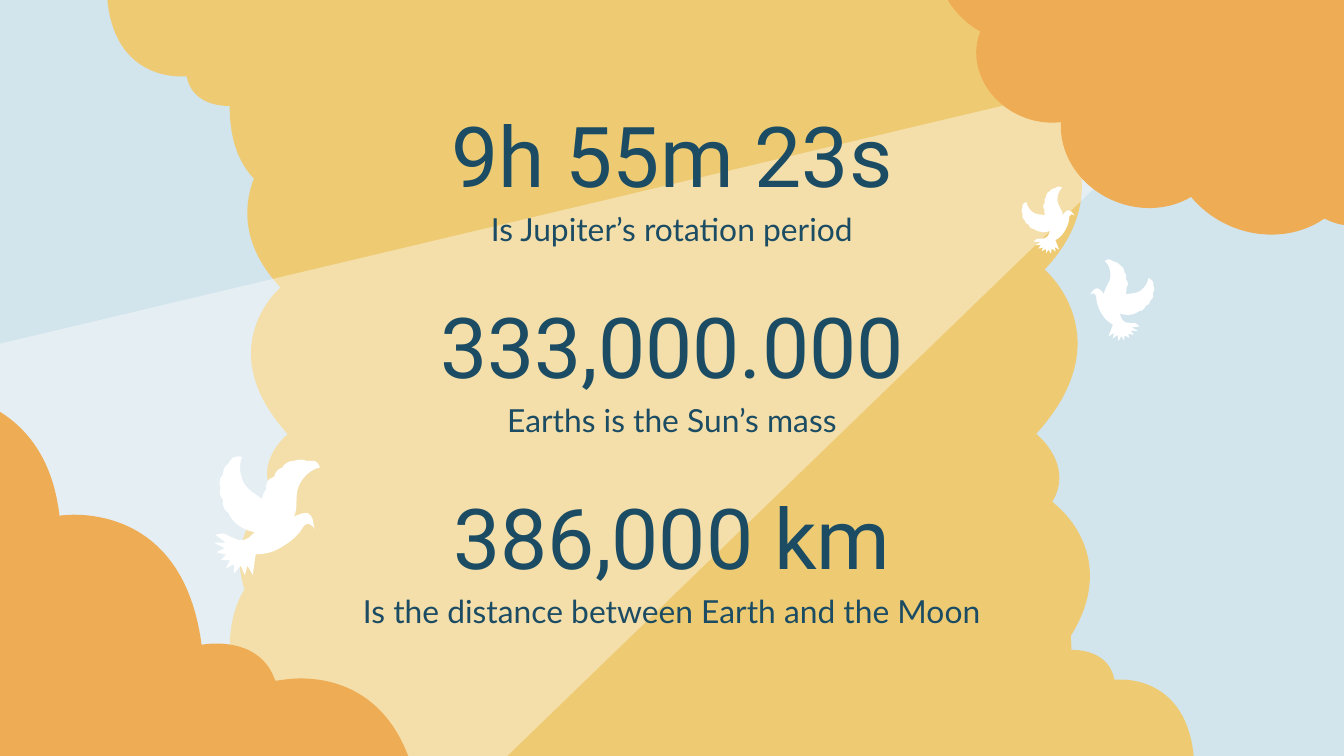
from collections import namedtuple
from math import cos, radians, sin

from lxml import etree
from pptx import Presentation
from pptx.dml.color import RGBColor
from pptx.enum.shapes import MSO_SHAPE
from pptx.enum.text import MSO_ANCHOR, PP_ALIGN
from pptx.oxml.ns import qn
from pptx.util import Cm, Pt

RECTANGLE = MSO_SHAPE.RECTANGLE
TRIANGLE = MSO_SHAPE.ISOSCELES_TRIANGLE
CLOUD = MSO_SHAPE.CLOUD
MIDDLE = MSO_ANCHOR.MIDDLE
CENTER = PP_ALIGN.CENTER

SKY, SAND, ORANGE, WHITE, NAVY = "D2E4EC", "EECB73", "EEAD55", "FFFFFF", "1B4C63"
WIDTH, HEIGHT = 25.4, 14.29

# Boxes are in centimetres.
Box = namedtuple("Box", "left top width height")

# Outlines start at a point; pairs are lines, sixes are cubic curves.
BANK_GRID = (198, 217)
BANK = [
    (0, 0), (0, 217), (198, 217), (193, 165, 156, 160, 144, 160), (139, 160),
    (135, 139, 113, 138, 109, 138), (107, 138), (107, 69, 55, 67, 50, 67),
    (49, 67), (50, 7, 0, 0, 0, 0),
]
DOVE_GRID = (100, 100)
NEAR_WING = [
    (80, 13), (75, 13), (70, 11, 66, 13, 66, 13), (59, 13, 57, 18, 57, 18),
    (51, 20, 51, 25, 51, 25), (51, 25, 44, 26, 45, 34), (45, 34, 39, 41, 42, 53),
    (45, 65, 53, 70, 58, 71), (62, 72), (62, 72, 60, 66, 65, 56),
    (70, 46, 65, 40, 70, 30), (76, 19, 85, 18, 85, 18), (84, 15, 82, 13, 80, 13),
]
BODY = [
    (76, 52), (69, 51, 66, 56, 58, 57), (49, 58, 38, 62, 28, 75), (25, 81),
    (25, 81, 42, 86, 55, 78), (68, 71, 72, 63, 72, 63), (72, 63, 74, 59, 77, 60),
    (81, 62, 81, 64, 81, 64), (80, 59), (80, 59, 80, 54, 76, 52),
]
TAIL = [
    (38, 68), (28, 72), (24, 72), (13, 67), (7, 68), (15, 74), (6, 74), (14, 78),
    (8, 81), (15, 83), (11, 87), (18, 87), (15, 93), (21, 90), (21, 97), (26, 91),
    (29, 98), (31, 91), (35, 98), (37, 83), (44, 77),
]
FAR_WING = [
    (27, 10), (19, 8, 17, 15, 17, 15), (12, 18, 13, 23, 13, 23),
    (8, 28, 11, 33, 11, 33), (9, 39, 13, 42, 13, 42), (13, 42, 11, 48, 17, 52),
    (17, 52, 20, 61, 32, 65), (50, 71, 59, 59, 59, 59), (57, 59, 51, 57, 47, 48),
    (42, 38, 34, 39, 28, 29), (23, 18, 27, 10, 27, 10),
]

FACTS = [
    ("9h 55m 23s", "Is Jupiter’s rotation period"),
    ("333,000.000", "Earths is the Sun’s mass"),
    ("386,000 km", "Is the distance between Earth and the Moon"),
]


def color(hex_string):
    return RGBColor.from_string(hex_string)


def paint(shape, fill):
    shape.shadow.inherit = False
    shape.fill.solid()
    shape.fill.fore_color.rgb = color(fill)
    shape.line.fill.background()


def bend_lines(shape, segments):
    """Turn each line whose segment has control points into a cubic curve."""
    lines = list(shape.element.iter(qn("a:lnTo")))
    for line, segment in zip(lines, segments):
        if len(segment) == 1:
            continue
        curve = etree.Element(qn("a:cubicBezTo"))
        for x, y in segment:
            etree.SubElement(curve, qn("a:pt"), x=str(x - shape.left), y=str(y - shape.top))
        line.getparent().replace(line, curve)


def add_outline(shapes, box, grid, outline, fill, angle=0, flip_h=False, flip_v=False):
    """Fit the grid to the box, mirror it, then turn it clockwise about its centre."""
    cosine, sine = cos(radians(angle)), sin(radians(angle))

    def place(x, y):
        across = (x / grid[0] - 0.5) * box.width * (-1 if flip_h else 1)
        down = (y / grid[1] - 0.5) * box.height * (-1 if flip_v else 1)
        return (Cm(box.left + box.width / 2 + across * cosine - down * sine),
                Cm(box.top + box.height / 2 + across * sine + down * cosine))

    start, *segments = [
        [place(*numbers[i:i + 2]) for i in range(0, len(numbers), 2)]
        for numbers in outline]
    builder = shapes.build_freeform(*start[0])
    builder.add_line_segments([segment[-1] for segment in segments], close=True)
    shape = builder.convert_to_shape()
    bend_lines(shape, segments)
    paint(shape, fill)


def add_preset(shapes, kind, box, fill, angle=0):
    shape = shapes.add_shape(kind, *map(Cm, box))
    shape.rotation = angle
    paint(shape, fill)
    return shape


def add_sand_column(slide, box):
    """Sand-coloured cloud column: a core with scalloped banks on both sides."""
    shapes = slide.shapes
    add_preset(shapes, RECTANGLE, Box(box.left + 4.95, box.top, 10.98, box.height), SAND)
    width, height = 5.03, 5.5
    for flip_h in (False, True):
        left = box.left if flip_h else box.left + box.width - width
        for flip_v in (False, True):
            top = box.top if flip_v else box.top + box.height - height
            add_outline(shapes, Box(left, top, width, height), BANK_GRID, BANK, SAND,
                        flip_h=flip_h, flip_v=flip_v)
    right_bank = Box(box.left + 14.66, box.top + 3.61, 6.73, 7.34)
    left_bank = Box(box.left - 0.02, box.top + 4.11, 6.02, 6.55)
    add_outline(shapes, right_bank, BANK_GRID, BANK, SAND, angle=42.3)
    add_outline(shapes, left_bank, BANK_GRID, BANK, SAND, angle=-42.3, flip_h=True)


def add_light_beam(slide, box):
    beam = add_preset(slide.shapes, TRIANGLE, box, WHITE, angle=61.3)
    white = beam.element.spPr.find(".//" + qn("a:srgbClr"))
    etree.SubElement(white, qn("a:alpha"), val="40000")


def add_corner_cloud(slide, box):
    cloud = add_preset(slide.shapes, CLOUD, box, ORANGE, angle=22.3)
    cloud.element.spPr.find(qn("a:xfrm")).set("flipH", "1")


def add_dove(slide, box, angle=0, flip_h=False):
    for part in (NEAR_WING, BODY, TAIL, FAR_WING):
        add_outline(slide.shapes, box, DOVE_GRID, part, WHITE, angle, flip_h)


def add_text(slide, box, text, font, size):
    text_frame = slide.shapes.add_textbox(*map(Cm, box)).text_frame
    text_frame.word_wrap = True
    text_frame.vertical_anchor = MIDDLE
    text_frame.margin_left = text_frame.margin_right = Cm(0.25)
    text_frame.margin_top = text_frame.margin_bottom = Cm(0.25)
    text_frame.text = text
    paragraph = text_frame.paragraphs[0]
    paragraph.alignment = CENTER
    run_font = paragraph.runs[0].font
    run_font.name, run_font.size = font, Pt(size)
    run_font.color.rgb = color(NAVY)


def add_fact(slide, box, number, caption):
    add_text(slide, Box(box.left, box.top, box.width, 2.13), number, "Roboto", 45)
    add_text(slide, Box(box.left, box.top + 1.65, box.width, 1.65), caption, "Lato", 17)


def main():
    presentation = Presentation()
    presentation.slide_width, presentation.slide_height = Cm(WIDTH), Cm(HEIGHT)
    slide = presentation.slides.add_slide(presentation.slide_layouts[6])
    slide.background.fill.solid()
    slide.background.fill.fore_color.rgb = color(SKY)

    add_sand_column(slide, Box(2.03, 0, 20.53, HEIGHT))
    add_light_beam(slide, Box(5.79, -5.46, 13.54, 24.66))
    add_corner_cloud(slide, Box(17.4, -2.51, 10.06, 6.58))
    add_outline(slide.shapes, Box(-0.66, 6.86, 8, 8.46), BANK_GRID, BANK, ORANGE, angle=-7.5)
    for row, (number, caption) in enumerate(FACTS):
        add_fact(slide, Box(6.17, 1.85 + 3.61 * row, 13.06, 3.3), number, caption)
    add_dove(slide, Box(20.35, 4.86, 1.51, 1.51), angle=29.2, flip_h=True)
    add_dove(slide, Box(19.27, 3.49, 1.24, 1.24), angle=-29.2)
    add_dove(slide, Box(3.89, 8.38, 2.54, 2.54))
    presentation.save("out.pptx")


if __name__ == "__main__":
    main()
